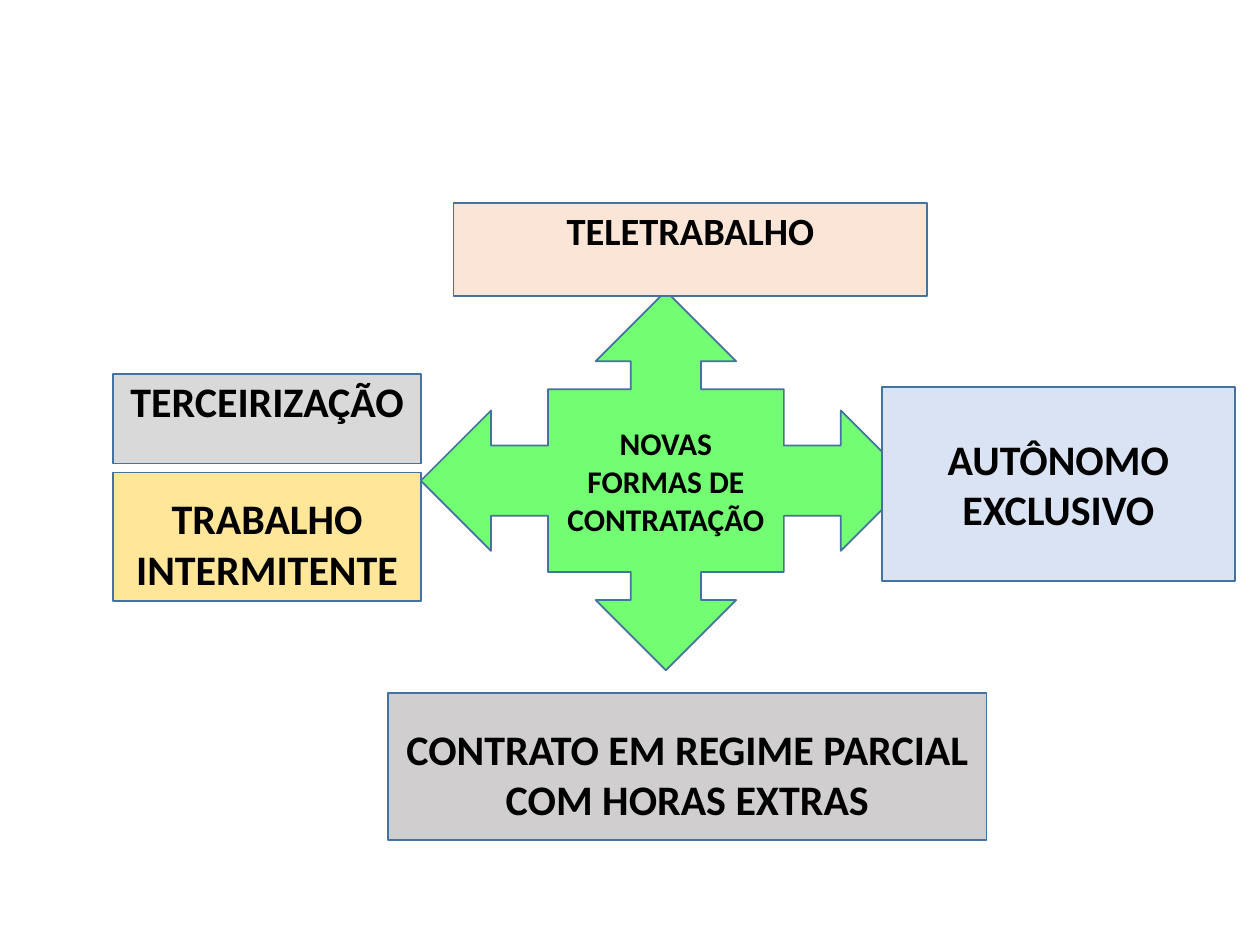
from pptx import Presentation
from pptx.dml.color import RGBColor
from pptx.enum.shapes import MSO_SHAPE
from pptx.enum.text import MSO_ANCHOR, PP_ALIGN
from pptx.util import Inches, Pt

COLORS = {
    "text": "000000",
    "outline": "43739E",
    "partial": "D0CECE",
    "center": "73FD73",
    "telework": "FBE5D6",
    "freelance": "DAE3F3",
    "outsourcing": "D9D9D9",
    "intermittent": "FFE699",
}

presentation = Presentation()
presentation.slide_width = Inches(10)
presentation.slide_height = Inches(7.5)
slide = presentation.slides.add_slide(presentation.slide_layouts[6])

column = presentation.slide_width / 100
row = presentation.slide_height / 75

BOX = MSO_SHAPE.RECTANGLE
ARROWS = MSO_SHAPE.QUAD_ARROW_CALLOUT
LEFT_COLUMN, LEFT_WIDTH = 9, 24.4

blocks = [
    ("partial", BOX, 30.8, 55, 47.5, 11.7, 24, 1.6, 0.5,
     "CONTRATO EM REGIME PARCIAL COM HORAS EXTRAS"),
    ("center", ARROWS, LEFT_COLUMN + LEFT_WIDTH, 23.1, 38.9, 30.1, 18, 0.5, 0.5,
     "NOVAS FORMAS DE CONTRATAÇÃO"),
    ("telework", BOX, 36, 16.1, 37.6, 7.4, 22, 0, 3.1, "TELETRABALHO"),
    ("freelance", BOX, 70, 30.7, 28, 15.4, 24, 0.5, 0.5, "AUTÔNOMO EXCLUSIVO"),
    ("outsourcing", BOX, LEFT_COLUMN, 29.7, LEFT_WIDTH, 7.1, 24, 0, 2.9,
     "TERCEIRIZAÇÃO"),
    ("intermittent", BOX, LEFT_COLUMN, 37.5, LEFT_WIDTH, 10.2, 24, 1, 0,
     "TRABALHO INTERMITENTE"),
]

for name, kind, left, top, width, height, size, inset_top, inset_bottom, text in blocks:
    shape = slide.shapes.add_shape(
        kind, round(left * column), round(top * row),
        round(width * column), round(height * row))
    shape.shadow.inherit = False
    shape.fill.solid()
    shape.fill.fore_color.rgb = RGBColor.from_string(COLORS[name])
    shape.line.color.rgb = RGBColor.from_string(COLORS["outline"])
    shape.line.width = Pt(1)

    frame = shape.text_frame
    frame.word_wrap = True
    frame.vertical_anchor = MSO_ANCHOR.MIDDLE
    frame.margin_top = round(inset_top * row)
    frame.margin_bottom = round(inset_bottom * row)
    paragraph = frame.paragraphs[0]
    paragraph.text = text
    paragraph.alignment = PP_ALIGN.CENTER
    paragraph.font.name = "Calibri"
    paragraph.font.size = Pt(size)
    paragraph.font.bold = True
    paragraph.font.color.rgb = RGBColor.from_string(COLORS["text"])

presentation.save("out.pptx")
